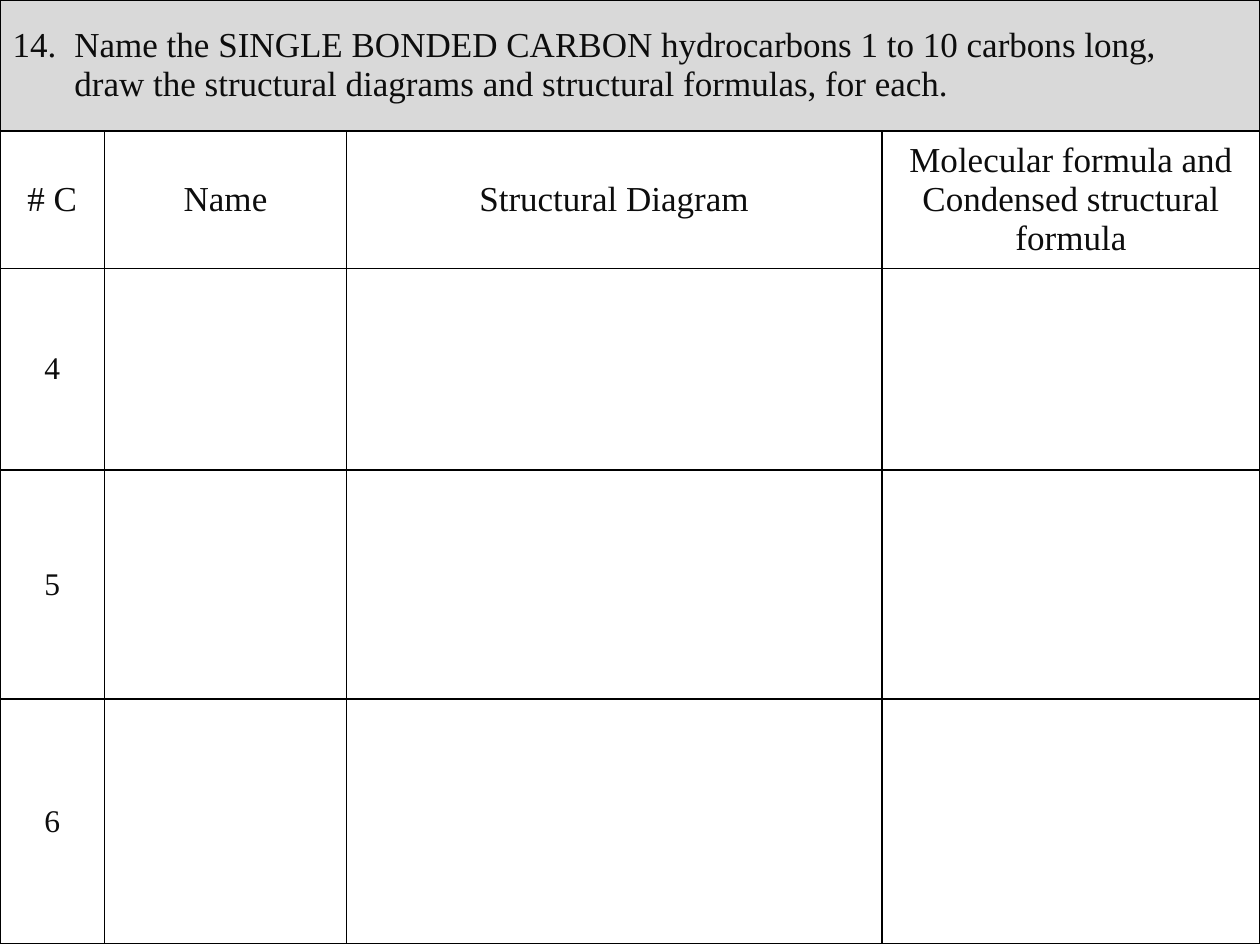
from lxml import etree
from pptx import Presentation
from pptx.dml.color import RGBColor
from pptx.enum.text import MSO_ANCHOR, PP_ALIGN
from pptx.oxml.ns import qn
from pptx.util import Inches, Pt

MIDDLE = MSO_ANCHOR.MIDDLE
LEFT, CENTER = PP_ALIGN.LEFT, PP_ALIGN.CENTER

COLORS = {"text": "0D0D0D", "border": "000000", "banner": "D9D9D9"}
FONT = "Times New Roman"
COLUMN_WIDTHS = [0.83, 1.92, 4.25, 3]
ROW_HEIGHTS = [1.04, 1.09, 1.6, 1.82, 1.94]

# The tab and the line break both lead to the hanging indent
QUESTION = (
    "14.\tName the SINGLE BONDED CARBON hydrocarbons 1 to 10 carbons long,"
    "\vdraw the structural diagrams and structural formulas, for each."
)
HEADINGS = [
    "# C",
    "Name",
    "Structural Diagram",
    "Molecular formula and Condensed structural formula",
]
CARBON_COUNTS = [4, 5, 6]


def add_borders(cell):
    """Draw a 1 pt line on all four sides of a cell."""
    properties = cell._tc.get_or_add_tcPr()
    for side in ("a:lnL", "a:lnR", "a:lnT", "a:lnB"):
        line = etree.SubElement(properties, qn(side), w=str(Pt(1)))
        fill = etree.SubElement(line, qn("a:solidFill"))
        etree.SubElement(fill, qn("a:srgbClr"), val=COLORS["border"])


def write_cell(cell, text, size, align=CENTER):
    """Put one styled paragraph in a cell and return it."""
    para = cell.text_frame.paragraphs[0]
    para.text = text
    para.alignment = align
    para.font.name = FONT
    para.font.size = Pt(size)
    para.font.color.rgb = RGBColor.from_string(COLORS["text"])
    return para


def add_worksheet_table(page, left, top):
    """Add the question banner, the headings and the answer rows."""
    frame = page.shapes.add_table(
        len(ROW_HEIGHTS), len(COLUMN_WIDTHS), left, top,
        Inches(sum(COLUMN_WIDTHS)), Inches(sum(ROW_HEIGHTS)),
    )
    table = frame.table
    table.first_row = table.horz_banding = False
    for column, width in zip(table.columns, COLUMN_WIDTHS):
        column.width = Inches(width)
    for row, height in zip(table.rows, ROW_HEIGHTS):
        row.height = Inches(height)

    # Plain bordered grid
    for cell in table.iter_cells():
        add_borders(cell)
        cell.fill.background()
        cell.vertical_anchor = MIDDLE

    # Question banner with a hanging number
    banner = table.cell(0, 0)
    banner.merge(table.cell(0, len(COLUMN_WIDTHS) - 1))
    banner.fill.solid()
    banner.fill.fore_color.rgb = RGBColor.from_string(COLORS["banner"])
    para = write_cell(banner, QUESTION, 20, LEFT)
    indent = Inches(0.49)
    para_properties = para._p.get_or_add_pPr()
    para_properties.set("marL", str(indent))
    para_properties.set("indent", str(-indent))

    # Headings
    for index, heading in enumerate(HEADINGS):
        write_cell(table.cell(1, index), heading, 20)

    # Answer rows
    for index, count in enumerate(CARBON_COUNTS, start=2):
        write_cell(table.cell(index, 0), str(count), 18)


def main():
    deck = Presentation()
    deck.slide_width, deck.slide_height = Inches(10), Inches(7.5)
    page = deck.slides.add_slide(deck.slide_layouts[6])
    add_worksheet_table(page, Inches(0), Inches(0))
    deck.save("out.pptx")


if __name__ == "__main__":
    main()
